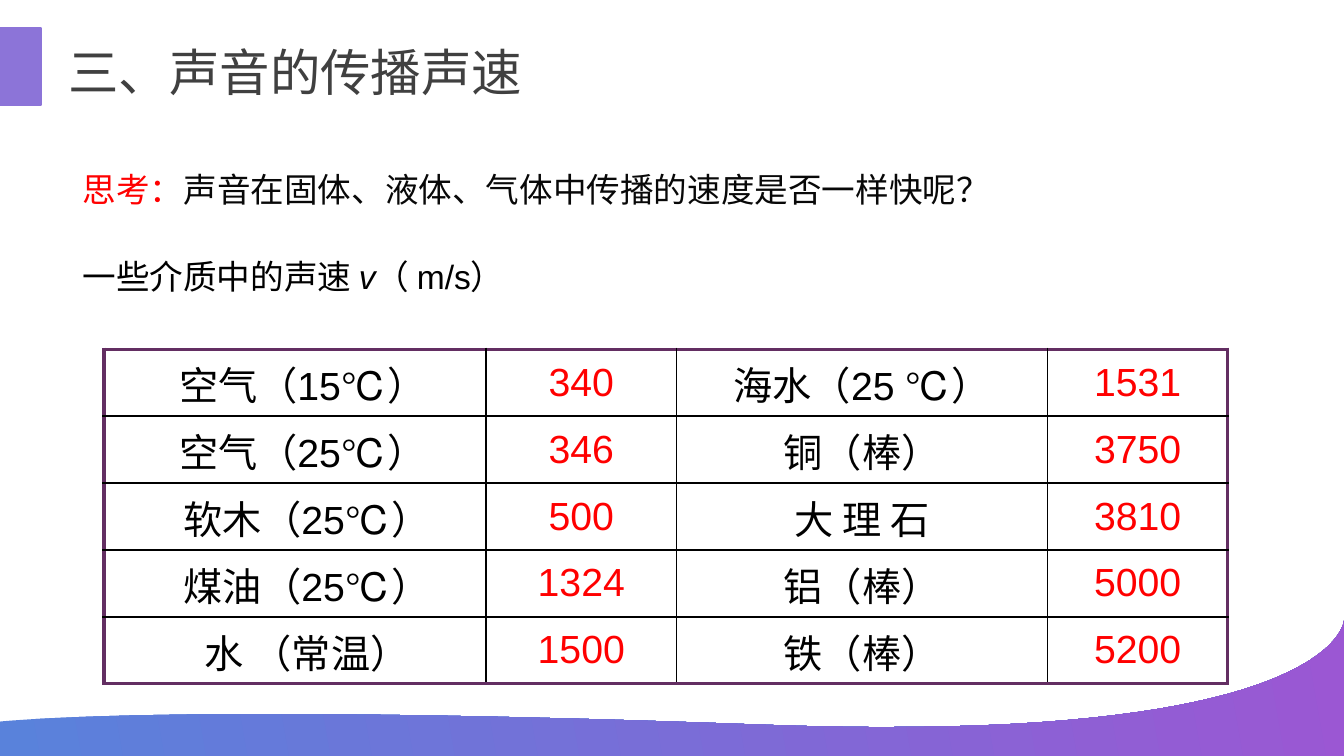
import pptx
import pptx.util
import pptx.dml.color
import pptx.enum.shapes
import pptx.enum.text
import pptx.oxml
from lxml import etree

RGB = pptx.dml.color.RGBColor.from_string
Pt = pptx.util.Pt
ANCHOR = pptx.enum.text.MSO_ANCHOR
ALIGN = pptx.enum.text.PP_ALIGN
THEME = {
    "font": "Arial", "heading_size": 27, "body_size": 18, "table_size": 21,
    "heading": "404040", "ink": "000000", "question": "080808", "accent": "FF0000",
    "tab": "8C74D8", "wave": ("5982DB", "9B57D3"),
    "frame": ("632E62", 2.25), "grid": ("000000", 1),
}

deck = pptx.Presentation()
deck.slide_width = pptx.util.Inches(10)
deck.slide_height = int(deck.slide_width * 9 / 16)
COL, ROW = deck.slide_width / 100, deck.slide_height / 100
slide = deck.slides.add_slide(deck.slide_layouts[6])


def add_line(left, top, width, height, size, runs):
    frame = slide.shapes.add_textbox(
        int(left * COL), int(top * ROW), int(width * COL), int(height * ROW)).text_frame
    frame.word_wrap = True
    frame.margin_left = frame.margin_right = int(0.7 * COL)
    frame.margin_top = frame.margin_bottom = int(0.7 * ROW)
    line = frame.paragraphs[0]
    line.font.name, line.font.size = THEME["font"], Pt(size)
    for wording, color, italic in runs:
        run = line.add_run()
        run.text = wording
        run.font.color.rgb = RGB(color)
        if italic:
            run.font.italic = True
    return frame


def bezier(*points, steps=40):
    for step in range(steps + 1):
        t = step / steps
        weights = ((1 - t) ** 3, 3 * t * (1 - t) ** 2, 3 * t ** 2 * (1 - t), t ** 3)
        yield tuple(int(sum(w * p[axis] for w, p in zip(weights, points)) * unit)
                    for axis, unit in ((0, COL), (1, ROW)))


crest = (56, 95.82)
left_edge, right_edge = (-0.1, 95.47), (100, 82.13)
outline = [
    *bezier(crest, (12.5, 92.98), left_edge, left_edge),
    (0, deck.slide_height), (deck.slide_width, deck.slide_height),
    *bezier(right_edge, right_edge, (99.4, 98.84), crest),
]
builder = slide.shapes.build_freeform(*outline[0])
builder.add_line_segments(outline[1:], close=True)
wave = builder.convert_to_shape()
wave.shadow.inherit = False
wave.line.fill.background()
wave.fill.gradient()
wave.fill.gradient_angle = 10
for stop, color in zip(wave.fill.gradient_stops, THEME["wave"]):
    stop.color.rgb = RGB(color)

heading_tab = slide.shapes.add_shape(
    pptx.enum.shapes.MSO_SHAPE.RECTANGLE, 0, int(3.75 * ROW), int(3.07 * COL), int(10.13 * ROW))
heading_tab.shadow.inherit = False
heading_tab.fill.solid()
heading_tab.fill.fore_color.rgb = heading_tab.line.color.rgb = RGB(THEME["tab"])
heading_tab.line.width = Pt(1)

ink = THEME["ink"]
caption = add_line(5.45, 31.47, 82.4, 10.84, THEME["body_size"], [
    ("一些介质中的声速 ", ink, False), ("v", ink, True), ("（ m/s）", ink, False)])
caption.vertical_anchor = ANCHOR.MIDDLE
caption.paragraphs[0].line_spacing = 0.9

media_speeds = [
    ("空气（15℃）", "340", "海水（25 ℃）", "1531"),
    ("空气（25℃）", "346", "铜（棒）", "3750"),
    ("软木（25℃）", "500", "大 理 石", "3810"),
    ("煤油（25℃）", "1324", "铝（棒）", "5000"),
    ("水 （常温）", "1500", "铁（棒）", "5200"),
]
medium_indents = (2.2, 2.2, 2.8, 2.8, 2.8)
column_widths = (28.4, 14.2, 27.6, 13.4)
last_row, last_column = len(media_speeds) - 1, len(column_widths) - 1
speeds = slide.shapes.add_table(
    last_row + 1, last_column + 1, int(7.75 * COL), int(46.22 * ROW),
    int(sum(column_widths) * COL), int(44.2 * ROW)).table
speeds.first_row = speeds.horz_banding = False
for column, width in zip(speeds.columns, column_widths):
    column.width = int(width * COL)

for r, record in enumerate(media_speeds):
    for c, entry in enumerate(record):
        cell = speeds.cell(r, c)
        cell.vertical_anchor = ANCHOR.MIDDLE
        cell.margin_left = int((medium_indents[r] if c == 0 else 1) * COL)
        cell.margin_right = int(COL)
        cell.margin_top = cell.margin_bottom = int(0.8 * ROW)
        cell.text = entry
        line = cell.text_frame.paragraphs[0]
        line.alignment = ALIGN.CENTER
        line.font.name, line.font.size = THEME["font"], Pt(THEME["table_size"])
        line.font.color.rgb = RGB(THEME["accent"] if c % 2 else ink)
        outer_sides = {"L": c == 0, "R": c == last_column, "T": r == 0, "B": r == last_row}
        for side, outer in outer_sides.items():
            color, weight = THEME["frame" if outer else "grid"]
            border = etree.SubElement(
                cell._tc.get_or_add_tcPr(), pptx.oxml.ns.qn(f"a:ln{side}"), w=str(Pt(weight)))
            paint = etree.SubElement(border, pptx.oxml.ns.qn("a:solidFill"))
            etree.SubElement(paint, pptx.oxml.ns.qn("a:srgbClr"), val=color)
        cell.fill.background()

question = add_line(5.45, 19.02, 88.5, 9.42, THEME["body_size"], [
    ("思考：", THEME["accent"], False),
    ("声音在固体、液体、气体中传播的速度是否一样快呢？", THEME["question"], False)])
question.paragraphs[0].line_spacing = 1.5

heading = add_line(4.4, 4.8, 35.4, 9.42, THEME["heading_size"], [
    ("三、声音的传播声速", THEME["heading"], False)])
heading.paragraphs[0].alignment = ALIGN.JUSTIFY

deck.save("out.pptx")
